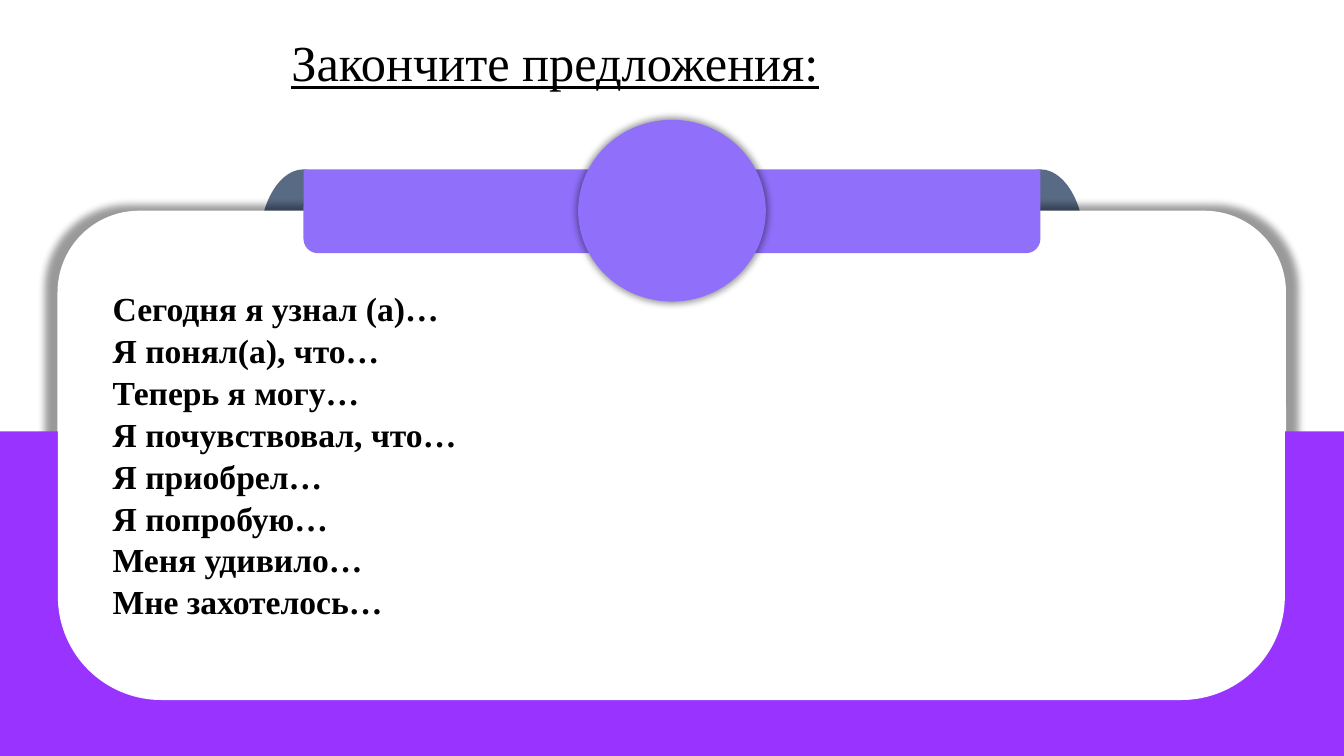
from lxml.etree import SubElement
from pptx import Presentation
from pptx.dml.color import RGBColor
from pptx.enum.shapes import MSO_SHAPE
from pptx.enum.text import MSO_ANCHOR, PP_ALIGN
from pptx.oxml.ns import qn
from pptx.util import Cm, Pt

BLACK = RGBColor(0x00, 0x00, 0x00)
WHITE = RGBColor(0xFF, 0xFF, 0xFF)
SLATE = RGBColor(0x59, 0x6A, 0x85)
LILAC = RGBColor(0x90, 0x6F, 0xFA)
PURPLE = RGBColor(0x99, 0x33, 0xFF)

WIDTH, HEIGHT = 33.87, 19.05
LINES = [
    "Сегодня я узнал (а)…",
    "Я понял(а), что…",
    "Теперь я могу…",
    "Я почувствовал, что…",
    "Я приобрел…",
    "Я попробую…",
    "Меня удивило…",
    "Мне захотелось…",
]


class Board:
    font = "Times New Roman"

    def __init__(self, deck):
        self.slide = deck.slides.add_slide(deck.slide_layouts[5])

    def shape(self, kind, left, top, width, height, fill, rounds=(), glow=False):
        item = self.slide.shapes.add_shape(
            kind, Cm(left), Cm(top), Cm(width), Cm(height))
        item.fill.solid()
        item.fill.fore_color.rgb = fill
        item.line.fill.background()
        for index, value in enumerate(rounds):
            item.adjustments[index] = value
        item.shadow.inherit = False
        if glow:
            self.glow(item)

    def glow(self, item):
        effects = item._element.spPr.find(qn("a:effectLst"))
        shade = SubElement(effects, qn("a:outerShdw"), blurRad=str(Pt(5)),
                           sx="102000", sy="102000", algn="ctr", rotWithShape="0")
        color = SubElement(shade, qn("a:srgbClr"), val=str(BLACK))
        SubElement(color, qn("a:alpha"), val="40000")

    def style(self, item, text, size, bold=False, under=False, space=1.0):
        frame = item.text_frame
        frame.word_wrap = True
        frame.vertical_anchor = MSO_ANCHOR.TOP
        frame.text = text
        for para in frame.paragraphs:
            para.alignment = PP_ALIGN.LEFT
            para.line_spacing = space
            for run in para.runs:
                run.font.name = self.font
                run.font.size = Pt(size)
                run.font.bold = bold
                run.font.underline = under
                run.font.color.rgb = BLACK

    def title(self, text, left, top, width, height):
        item = self.slide.shapes.title
        item.left, item.top = Cm(left), Cm(top)
        item.width, item.height = Cm(width), Cm(height)
        self.style(item, text, 36, under=True)

    def body(self, lines, left, top, width, height):
        item = self.slide.shapes.add_textbox(
            Cm(left), Cm(top), Cm(width), Cm(height))
        self.style(item, "\n".join(lines), 24, bold=True, space=1.04)


def main():
    deck = Presentation()
    deck.slide_width, deck.slide_height = Cm(WIDTH), Cm(HEIGHT)
    board = Board(deck)
    board.title("Закончите предложения:", 7.09, 0.66, 19.69, 1.8)

    # Folded ends of the ribbon, mirrored about the middle
    fold = 2.24
    for left in (6.53, WIDTH - 6.53 - fold):
        board.shape(MSO_SHAPE.OVAL, left, 4.27, fold, 3.89, SLATE)

    # Card, ribbon and round badge
    board.shape(MSO_SHAPE.ROUNDED_RECTANGLE, 1.45, 5.31, 30.96, 12.32, WHITE,
                rounds=(0.167,), glow=True)
    board.shape(MSO_SHAPE.ROUND_2_SAME_RECTANGLE, 7.65, 4.27, 18.57, 2.11, LILAC,
                rounds=(0, 0.17))
    board.shape(MSO_SHAPE.OVAL, 14.57, 3.02, 4.73, 4.58, LILAC, glow=True)

    # Purple floor with the lower part of the card over it
    board.shape(MSO_SHAPE.RECTANGLE, 0, 10.87, WIDTH, HEIGHT - 10.87, PURPLE)
    board.shape(MSO_SHAPE.ROUND_2_SAME_RECTANGLE, 1.46, 10.78, 30.92, 6.86, WHITE,
                rounds=(0, 0.38))

    # Sentence openings
    board.body(LINES, 2.59, 7.09, 28.78, 8.46)
    deck.save("out.pptx")


if __name__ == "__main__":
    main()
